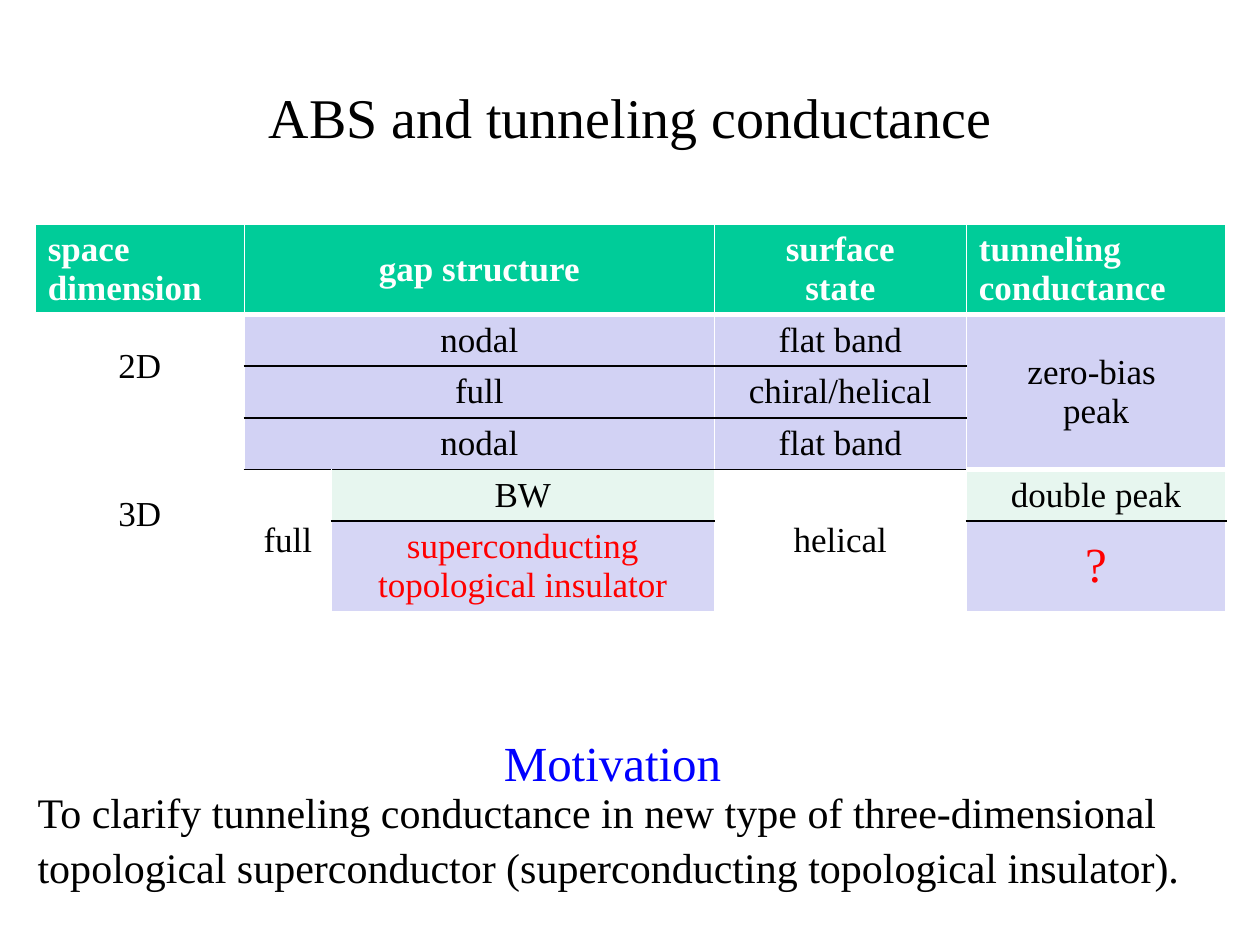
import pptx
import pptx.dml.color
import pptx.enum.text
import pptx.oxml
import pptx.oxml.ns
import pptx.util
from dataclasses import dataclass

Inches = pptx.util.Inches
Pt = pptx.util.Pt
RGBColor = pptx.dml.color.RGBColor
PP_ALIGN = pptx.enum.text.PP_ALIGN
MSO_ANCHOR = pptx.enum.text.MSO_ANCHOR

FONT = "Times New Roman"
BLACK = RGBColor(0x00, 0x00, 0x00)
WHITE = RGBColor(0xFF, 0xFF, 0xFF)
RED = RGBColor(0xFF, 0x00, 0x00)
BLUE = RGBColor(0x00, 0x00, 0xFF)
GREEN = RGBColor(0x00, 0xCC, 0x99)
LILAC = RGBColor(0xD2, 0xD2, 0xF4)
PALE_LILAC = RGBColor(0xD6, 0xD6, 0xF5)
MINT = RGBColor(0xE7, 0xF6, 0xEF)


@dataclass
class Entry:
    """One table entry, possibly spanning several cells."""
    row: int
    col: int
    text: str
    fill: RGBColor = None
    rows: int = 1
    cols: int = 1
    middle: bool = False
    left: bool = False
    color: RGBColor = BLACK
    size: int = 20


class SlideBuilder:
    def __init__(self, slide, font):
        self.s = slide
        self.font = font

    def set_text(self, tf, text, size, color, align, bold=False, spacing=None):
        for i, line in enumerate(text.split("\n")):
            p = tf.paragraphs[0] if i == 0 else tf.add_paragraph()
            p.text = line
            p.alignment = align
            p.line_spacing = spacing
            p.font.name = self.font
            p.font.size = Pt(size)
            p.font.bold = bold
            p.font.color.rgb = color

    def title(self, text, left, top, width, height):
        sp = self.s.shapes.title
        sp.left, sp.top = Inches(left), Inches(top)
        sp.width, sp.height = Inches(width), Inches(height)
        sp.text_frame.vertical_anchor = MSO_ANCHOR.MIDDLE
        self.set_text(sp.text_frame, text, 32, BLACK, PP_ALIGN.CENTER)

    def text(self, text, left, top, width, height, size, color):
        sp = self.s.shapes.add_textbox(
            Inches(left), Inches(top), Inches(width), Inches(height))
        sp.text_frame.word_wrap = False
        self.set_text(sp.text_frame, text, size, color, PP_ALIGN.LEFT, spacing=1.1)

    def border(self, cell, edges):
        """Set borders from (side, colour, width), in the order L, R, T, B."""
        tc_pr = cell._tc.get_or_add_tcPr()
        for side, color, width in edges:
            tc_pr.append(pptx.oxml.parse_xml(
                f'<a:ln{side} {pptx.oxml.ns.nsdecls("a")} w="{Pt(width)}">'
                f'<a:solidFill><a:srgbClr val="{color}"/></a:solidFill>'
                f'</a:ln{side}>'))

    def table(self, left, top, widths, heights, entries):
        shape = self.s.shapes.add_table(
            len(heights), len(widths), Inches(left), Inches(top),
            Inches(sum(widths)), Inches(sum(heights)))
        table = shape.table
        table.first_row = table.horz_banding = False
        for column, width in zip(table.columns, widths):
            column.width = Inches(width)
        for row, height in zip(table.rows, heights):
            row.height = Inches(height)
        for entry in entries:
            self.entry(table, entry, len(heights) - 1)

    def entry(self, table, e, last_row):
        header = e.row == 0
        bottom, right = e.row + e.rows - 1, e.col + e.cols - 1
        top_color = WHITE if e.row <= 1 else BLACK
        bottom_color = WHITE if header or bottom == last_row else BLACK

        # Outer borders and fill of every cell in the span
        for r in range(e.row, bottom + 1):
            for c in range(e.col, right + 1):
                cell = table.cell(r, c)
                edges = [
                    (c == e.col, "L", WHITE, 1),
                    (c == right, "R", WHITE, 1),
                    (r == e.row, "T", top_color, 3 if r == 1 else 1),
                    (r == bottom, "B", bottom_color, 3 if header else 1),
                ]
                self.border(cell, [edge for outer, *edge in edges if outer])
                if e.fill is None:
                    cell.fill.background()
                else:
                    cell.fill.solid()
                    cell.fill.fore_color.rgb = e.fill

        cell = table.cell(e.row, e.col)
        if e.rows > 1 or e.cols > 1:
            cell.merge(table.cell(bottom, right))
        cell.vertical_anchor = MSO_ANCHOR.MIDDLE if e.middle else MSO_ANCHOR.TOP
        self.set_text(cell.text_frame, e.text, e.size, WHITE if header else e.color,
                      PP_ALIGN.LEFT if e.left else PP_ALIGN.CENTER, bold=header)


ENTRIES = [
    # Header
    Entry(0, 0, "space\ndimension", GREEN, left=True),
    Entry(0, 1, "gap structure", GREEN, cols=2, middle=True),
    Entry(0, 3, "surface\nstate", GREEN),
    Entry(0, 4, "tunneling\nconductance", GREEN, left=True),
    # Two dimensions
    Entry(1, 0, "2D", rows=2, middle=True),
    Entry(1, 1, "nodal", LILAC, cols=2),
    Entry(1, 3, "flat band", LILAC),
    Entry(1, 4, "zero-bias \npeak", LILAC, rows=3, middle=True),
    Entry(2, 1, "full", LILAC, cols=2, middle=True),
    Entry(2, 3, "chiral/helical", LILAC),
    # Three dimensions
    Entry(3, 0, "3D", rows=3, middle=True),
    Entry(3, 1, "nodal", LILAC, cols=2),
    Entry(3, 3, "flat band", LILAC),
    Entry(4, 1, "full", rows=2, middle=True),
    Entry(4, 2, "BW", MINT),
    Entry(4, 3, "helical", rows=2, middle=True),
    Entry(4, 4, "double peak", MINT),
    Entry(5, 2, "superconducting\ntopological insulator", PALE_LILAC, color=RED),
    Entry(5, 4, "?", PALE_LILAC, middle=True, color=RED, size=28),
]


def main():
    prs = pptx.Presentation()
    prs.slide_width, prs.slide_height = Inches(10), Inches(7.5)
    slide = SlideBuilder(prs.slides.add_slide(prs.slide_layouts[5]), FONT)

    slide.title("ABS and tunneling conductance", 0.2, 0.3, 9.61, 1.25)
    slide.table(0.28, 1.78, [1.66, 0.69, 3.04, 2, 2.06],
                [0.71] + [0.41] * 4 + [0.71], ENTRIES)

    # Motivation
    slide.text("To clarify tunneling conductance in new type of three-dimensional\n"
               "topological superconductor (superconducting topological insulator).",
               0.2, 6.15, 9.49, 0.91, 24, BLACK)
    slide.text("Motivation", 3.9, 5.72, 1.94, 0.57, 28, BLUE)

    prs.save("out.pptx")


if __name__ == "__main__":
    main()
